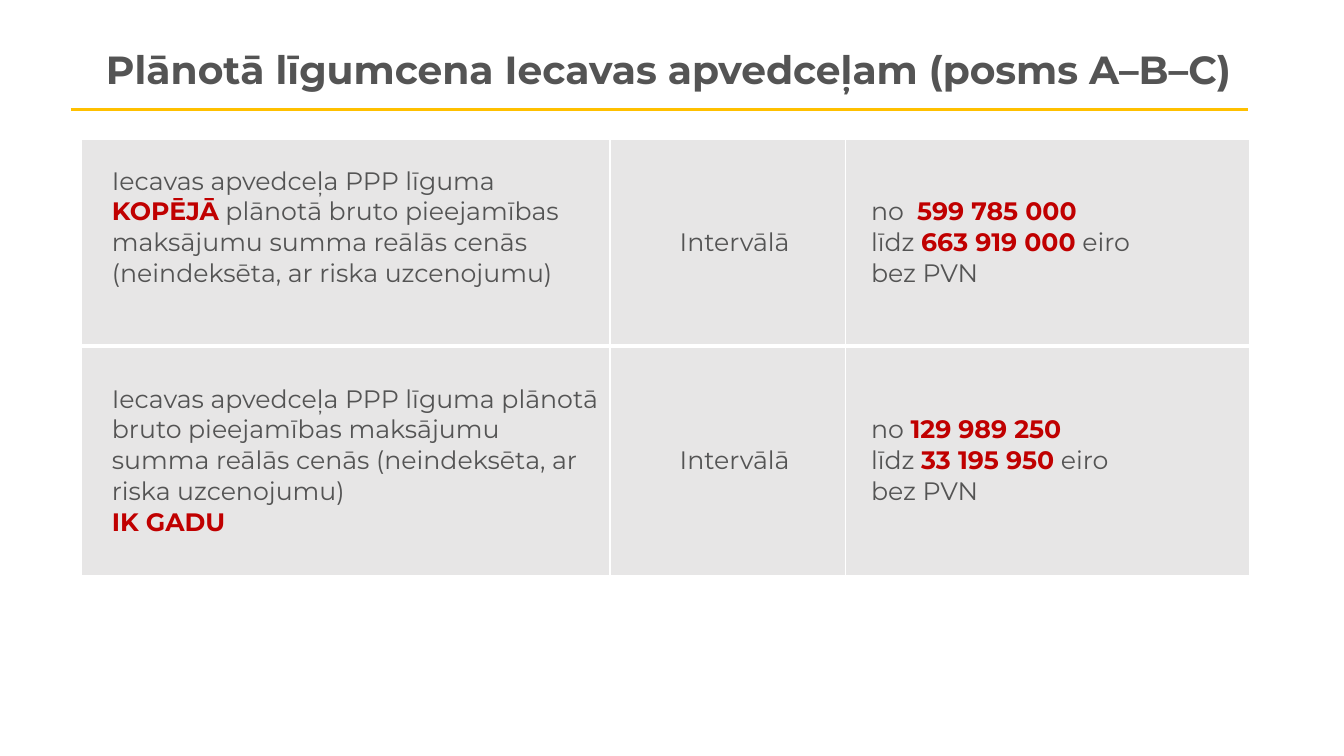
import pptx
import pptx.dml.color
import pptx.enum.shapes
import pptx.enum.text
import pptx.oxml
import pptx.oxml.ns
import pptx.util
from dataclasses import dataclass
from lxml import etree

Inches = pptx.util.Inches
Pt = pptx.util.Pt
Align = pptx.enum.text.PP_ALIGN
Anchor = pptx.enum.text.MSO_ANCHOR


@dataclass(frozen=True)
class Theme:
    font: str = "Montserrat"
    text: str = "545454"
    accent: str = "C00000"
    rule: str = "FFC000"
    cell: str = "E7E6E6"
    edge: str = "FFFFFF"
    title: int = 28
    body: int = 18


THEME = Theme()

# Each cell is a list of paragraphs; text between asterisks is highlighted
ROWS = [
    [
        ["Iecavas apvedceļa PPP līguma *KOPĒJĀ* plānotā bruto pieejamības "
         "maksājumu summa reālās cenās (neindeksēta, ar riska uzcenojumu)"],
        ["Intervālā "],
        ["no  *599 785 000*", "līdz *663 919 000* eiro", "bez PVN"],
    ],
    [
        ["Iecavas apvedceļa PPP līguma plānotā bruto pieejamības maksājumu "
         "summa reālās cenās (neindeksēta, ar riska uzcenojumu)",
         "*IK GADU*"],
        ["Intervālā "],
        ["no *129 989 250*", "līdz *33 195 950* eiro", "bez PVN"],
    ],
]


def color(code):
    return pptx.dml.color.RGBColor.from_string(code)


def write(frame, lines, size=THEME.body, bold=False, align=Align.LEFT,
          indent=0, spacing=None):
    """Fill a text frame, one paragraph per line."""
    frame.word_wrap = True
    for i, line in enumerate(lines):
        para = frame.add_paragraph() if i else frame.paragraphs[0]
        para.alignment = align
        if spacing:
            para.line_spacing = spacing
        if indent:
            props = para._p.get_or_add_pPr()
            props.set("marL", str(Inches(indent)))
            props.set("indent", "0")
        for j, part in enumerate(line.split("*")):
            if not part:
                continue
            strong = j % 2 == 1
            run = para.add_run()
            run.text = part
            run.font.name = THEME.font
            run.font.size = Pt(size)
            run.font.bold = bold or strong
            run.font.color.rgb = color(THEME.accent if strong else THEME.text)


def border(cell, **widths):
    """Draw cell edges; widths are points keyed by L, R, T, B."""
    props = cell._tc.get_or_add_tcPr()
    for i, (side, width) in enumerate(widths.items()):
        props.insert(i, pptx.oxml.parse_xml(
            f'<a:ln{side} {pptx.oxml.ns.nsdecls("a")} w="{Pt(width)}">'
            f'<a:solidFill><a:srgbClr val="{THEME.edge}"/></a:solidFill>'
            f'</a:ln{side}>'))


def header(slide, left, top, width, height):
    # Title
    box = slide.shapes.add_textbox(
        Inches(left), Inches(top), Inches(width), Inches(height))
    box.text_frame.vertical_anchor = Anchor.MIDDLE
    write(box.text_frame, ["Plānotā līgumcena Iecavas apvedceļam (posms A–B–C)"],
          size=THEME.title, bold=True, align=Align.CENTER, spacing=0.9)

    # Rule below the title
    y = Inches(top + height - 0.01)
    rule = slide.shapes.add_connector(
        pptx.enum.shapes.MSO_CONNECTOR.STRAIGHT,
        Inches(left + 0.3), y, Inches(left + width - 0.48), y)
    rule.line.color.rgb = color(THEME.rule)
    rule.line.width = Pt(2)
    etree.SubElement(rule._element.spPr, pptx.oxml.ns.qn("a:effectLst"))


def prices(slide, left, top, width, height):
    table = slide.shapes.add_table(
        len(ROWS), len(ROWS[0]), Inches(left), Inches(top),
        Inches(width), Inches(height)).table
    table.first_row = table.horz_banding = False
    for col, size in zip(table.columns, (5.24, 2.34, width - 7.58)):
        col.width = Inches(size)
    for row, size in zip(table.rows, (2.05, height - 2.05)):
        row.height = Inches(size)

    for r, row in enumerate(ROWS):
        for c, lines in enumerate(row):
            cell = table.cell(r, c)
            cell.fill.solid()
            cell.fill.fore_color.rgb = color(THEME.cell)
            cell.vertical_anchor = Anchor.MIDDLE
            if c:
                cell.margin_left = cell.margin_right = Inches(0.05)
            write(cell.text_frame, lines, indent=0.2,
                  align=Align.CENTER if c == 1 else Align.LEFT)
            # The edge between the rows is thicker
            border(cell, L=1, R=1, T=3 if r else 1, B=1 if r else 3)

    # The first description sits one line higher
    table.cell(0, 0).margin_bottom = Inches(0.35)


def main():
    deck = pptx.Presentation()
    deck.slide_width = Inches(13.33)
    deck.slide_height = Inches(7.5)
    slide = deck.slides.add_slide(deck.slide_layouts[6])
    header(slide, 0.4, 0.32, 12.46, 0.78)
    prices(slide, 0.81, 1.38, 11.58, 4.33)
    deck.save("out.pptx")


if __name__ == "__main__":
    main()
